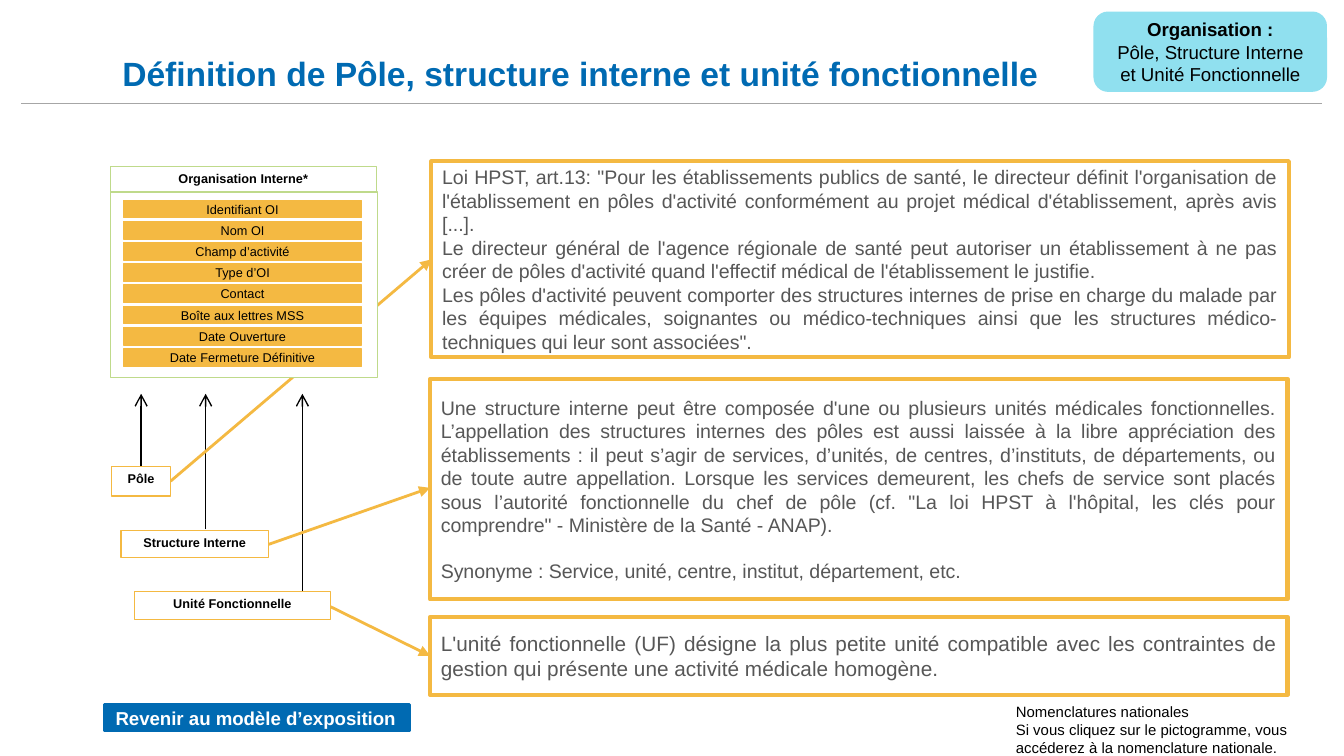
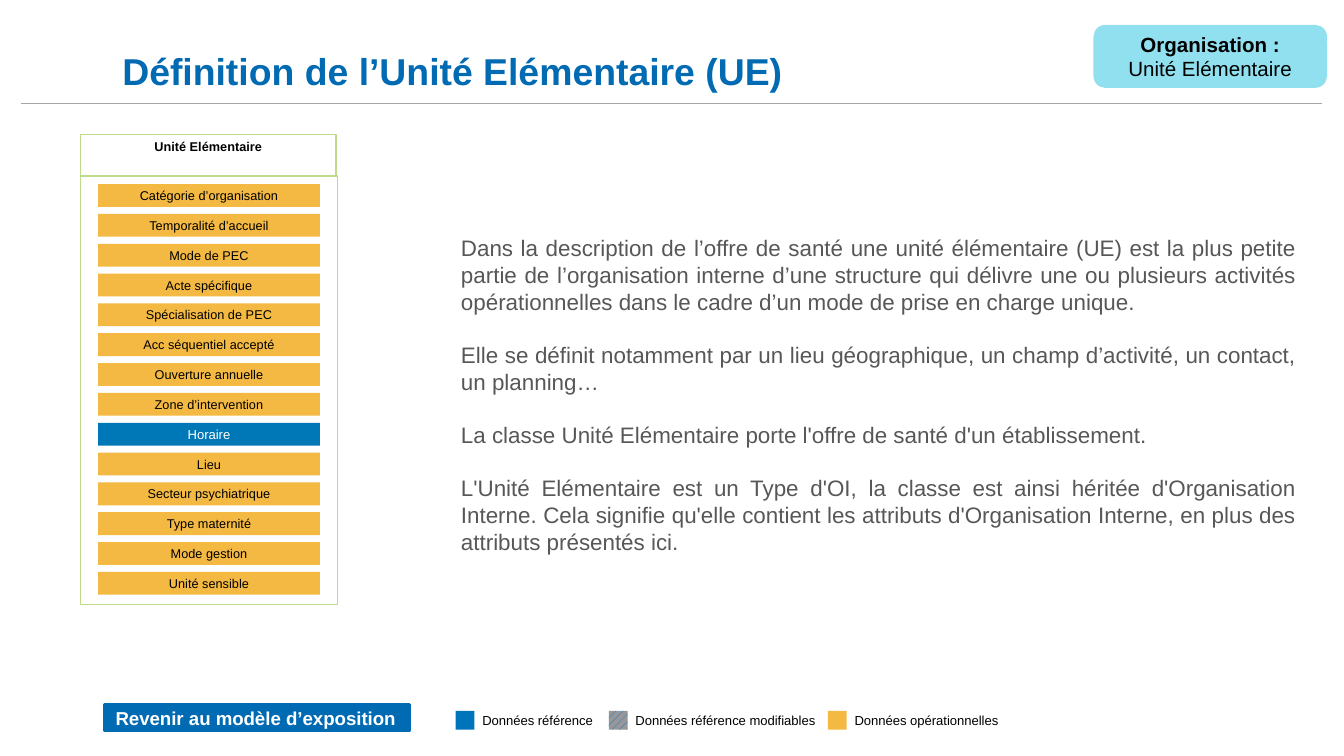
from lxml.etree import SubElement
from pptx import Presentation
from pptx.dml.color import RGBColor
from pptx.enum.dml import MSO_PATTERN as Hatch
from pptx.enum.shapes import MSO_CONNECTOR as Link, MSO_SHAPE as Form
from pptx.enum.text import MSO_ANCHOR as Anchor, PP_ALIGN as Align
from pptx.oxml.ns import qn
from pptx.util import Inches, Pt

CELL = 0.1
COLS, ROWS = 100, 56.25
FONT = "Arial"
BLUE, SEA, REF = "006AB2", "0077B6", "0074BA"
GOLD, GREEN, AQUA = "F4B942", "BFDA8B", "90E0EF"
INK, TEXT, WHITE, RULE, GREY = "000000", "575757", "FFFFFF", "A6A6A6", "97979B"

POLE_TEXT = [
    "Loi HPST, art.13: \"Pour les établissements publics de santé, le directeur définit "
    "l'organisation de l'établissement en pôles d'activité conformément au projet médical "
    "d'établissement, après avis [...].",
    "Le directeur général de l'agence régionale de santé peut autoriser un établissement à ne "
    "pas créer de pôles d'activité quand l'effectif médical de l'établissement le justifie.",
    "Les pôles d'activité peuvent comporter des structures internes de prise en charge du malade "
    "par les équipes médicales, soignantes ou médico-techniques ainsi que les structures "
    "médico-techniques qui leur sont associées\".",
]
INNER_TEXT = [
    "Une structure interne peut être composée d'une ou plusieurs unités médicales fonctionnelles. "
    "L’appellation des structures internes des pôles est aussi laissée à la libre appréciation des "
    "établissements : il peut s’agir de services, d’unités, de centres, d’instituts, de "
    "départements, ou de toute autre appellation. Lorsque les services demeurent, les chefs de "
    "service sont placés sous l’autorité fonctionnelle du chef de pôle (cf. \"La loi HPST à "
    "l'hôpital, les clés pour comprendre\" - Ministère de la Santé - ANAP).",
    "Synonyme : Service, unité, centre, institut, département, etc.",
]
UNIT_TEXT = [
    "L'unité fonctionnelle (UF) désigne la plus petite unité compatible avec les contraintes de "
    "gestion qui présente une activité médicale homogène.",
]
BASIC_TEXT = [
    "Dans la description de l’offre de santé une unité élémentaire (UE) est la plus petite partie "
    "de l’organisation interne d’une structure qui délivre une ou plusieurs activités "
    "opérationnelles dans le cadre d’un mode de prise en charge unique.",
    "Elle se définit notamment par un lieu géographique, un champ d’activité, un contact, un "
    "planning…",
    "La classe Unité Elémentaire porte l'offre de santé d'un établissement.",
    "L'Unité Elémentaire est un Type d'OI, la classe est ainsi héritée d'Organisation Interne. "
    "Cela signifie qu'elle contient les attributs d'Organisation Interne, en plus des attributs "
    "présentés ici.",
]
INNER_ROWS = ["Identifiant OI", "Nom OI", "Champ d’activité", "Type d’OI", "Contact",
              "Boîte aux lettres MSS", "Date Ouverture", "Date Fermeture Définitive"]
BASIC_ROWS = ["Catégorie d’organisation", "Temporalité d’accueil", "Mode de PEC",
              "Acte spécifique", "Spécialisation de PEC", "Acc séquentiel accepté",
              "Ouverture annuelle", "Zone d’intervention", "Horaire", "Lieu",
              "Secteur psychiatrique", "Type maternité", "Mode gestion", "Unité sensible"]


def color(code):
    """Turn a hex string into a colour."""
    return RGBColor.from_string(code)


def grid(*cells):
    """Turn grid cells into lengths."""
    return [Inches(n * CELL) for n in cells]


def write(shape, paras, size, ink=INK, bold=False, align=Align.LEFT,
          anchor=Anchor.TOP, pad=(1, 0.5), gap=0):
    """Fill a shape with evenly styled paragraphs."""
    frame = shape.text_frame
    frame.word_wrap = True
    frame.vertical_anchor = anchor
    frame.margin_left = frame.margin_right = Inches(pad[0] * CELL)
    frame.margin_top = frame.margin_bottom = Inches(pad[1] * CELL)
    for i, words in enumerate(paras):
        para = frame.add_paragraph() if i else frame.paragraphs[0]
        para.add_run().text = words
        para.alignment = align
        if i and gap:
            para.space_before = Pt(gap)
        font = para.font
        font.name, font.size, font.bold = FONT, Pt(size), bold
        font.color.rgb = color(ink)
    return frame


def label(slide, at, paras, size, **style):
    """Add a plain text box."""
    return write(slide.shapes.add_textbox(*grid(*at)), paras, size, **style)


def box(slide, at, fill=None, line=None, width=0.75, form=Form.RECTANGLE):
    """Add a flat shape."""
    shape = slide.shapes.add_shape(form, *grid(*at))
    shape.shadow.inherit = False
    if fill:
        shape.fill.solid()
        shape.fill.fore_color.rgb = color(fill)
    else:
        shape.fill.background()
    if line:
        shape.line.color.rgb = color(line)
        shape.line.width = Pt(width)
    else:
        shape.line.fill.background()
    return shape


def link(slide, start, end, ink, width, head=None):
    """Add a straight line, with an arrowhead if one is named."""
    wire = slide.shapes.add_connector(Link.STRAIGHT, *grid(*start, *end))
    wire.line.color.rgb = color(ink)
    wire.line.width = Pt(width)
    if head:
        SubElement(wire.line._get_or_add_ln(), qn("a:tailEnd"), type=head)
    SubElement(wire._element.spPr, qn("a:effectLst"))


def tag(slide, at, words, line=GOLD):
    """Add a small bold heading in a thin frame."""
    write(box(slide, at, WHITE, line), [words], 6.8, bold=True,
          align=Align.CENTER, pad=(0.3, 0.3))


def quote(slide, at, paras, size, gap=0, line=GOLD):
    """Add a justified definition."""
    write(box(slide, at, None, line, 2.25), paras, size, TEXT, align=Align.JUSTIFY,
          anchor=Anchor.MIDDLE, pad=(0.8, 0.5), gap=gap)


def card(slide, at, head, title, rows, first, step, line=None):
    """Add a class card: heading, frame and evenly stacked fields."""
    left, top, width, _ = at
    box(slide, at, WHITE, GREEN)
    tag(slide, (left, top - head, width - 0.1, head), title, GREEN)
    x, y, w, h = first
    for i, words in enumerate(rows):
        key = words == "Horaire"
        bar = box(slide, (x, y + i * step, w, h), SEA if key else GOLD, line)
        write(bar, [words], 7 if key else 6.8, WHITE if key else INK,
              align=Align.CENTER, anchor=Anchor.MIDDLE, pad=(0.3, 0))


def badge(slide, top, height, words, size):
    """Add the rounded topic mark at the top right."""
    mark = box(slide, (81.5, top, 17.1, height), AQUA, AQUA, 2, Form.ROUNDED_RECTANGLE)
    frame = write(mark, ["Organisation :", words], size, bold=True,
                  align=Align.CENTER, anchor=Anchor.MIDDLE)
    frame.paragraphs[1].font.bold = False


def start(deck, title, size, width):
    """Add a slide with its title, rule and return button."""
    slide = deck.slides.add_slide(deck.slide_layouts[6])
    link(slide, (1.6, 7.7), (98.4, 7.7), RULE, 0.25)
    frame = label(slide, (9.1, 1, width, 5.9), [title], size, ink=BLUE, bold=True,
                  anchor=Anchor.BOTTOM, pad=(0, 0))
    frame.paragraphs[0].line_spacing = Pt(22)
    write(box(slide, (7.8, 52.4, 22.7, 2), BLUE, BLUE, 1.5),
          ["Revenir au modèle d’exposition"], 10, WHITE, True,
          anchor=Anchor.MIDDLE, pad=(0.8, 0))
    return slide


def legend(slide):
    """Add the colour key at the foot."""
    keys = [(33.9, 11.8, REF, "Données référence"),
            (45.3, 16.3, GREY, "Données référence modifiables"),
            (61.6, 15.2, GOLD, "Données opérationnelles")]
    for x, width, fill, words in keys:
        mark = box(slide, (x, 52.9, 1.4, 1.4), fill)
        if fill == GREY:
            mark.fill.patterned()
            mark.fill.pattern = Hatch.WIDE_UPWARD_DIAGONAL
            mark.fill.fore_color.rgb = color(REF)
            mark.fill.back_color.rgb = color(GREY)
        label(slide, (x + 1, 52.5, width, 2.2), [words], 7)


def inner(deck):
    """Build the slide on the three internal levels."""
    slide = start(deck, "Définition de Pôle, structure interne et unité fonctionnelle", 18, 73.2)
    for x, y in [(10.5, 34.7), (15.3, 39.4), (22.5, 44)]:
        link(slide, (x, y), (x, 29.3), INK, 0.75, "arrow")
    for tip, end in [((12.7, 35.8), (32.1, 19.3)), ((20, 40.5), (32, 36.3)),
                     ((24.5, 45.1), (32, 48.8))]:
        link(slide, tip, end, GOLD, 1.5, "triangle")
    card(slide, (8.2, 14.3, 19.9, 13.8), 1.9, "Organisation Interne*", INNER_ROWS,
         (9.2, 14.9, 17.7, 1.3), 1.58, GOLD)
    tag(slide, (8.3, 34.7, 4.4, 2.2), "Pôle")
    tag(slide, (9, 39.5, 11, 2), "Structure Interne")
    tag(slide, (10, 44, 14.6, 2.1), "Unité Fonctionnelle")
    quote(slide, (32.1, 12, 63.8, 14.6), POLE_TEXT, 10.5)
    quote(slide, (32, 28.2, 63.8, 16.4), INNER_TEXT, 10.5, 12)
    quote(slide, (32, 45.9, 63.8, 5.8), UNIT_TEXT, 11.1)
    badge(slide, 1, 5.7, "Pôle, Structure Interne et Unité Fonctionnelle", 10)
    label(slide, (74.6, 51.8, 25.8, 5),
          ["Nomenclatures nationales",
           "Si vous cliquez sur le pictogramme, vous accéderez à la nomenclature nationale."], 8)


def basic(deck):
    """Build the slide on the elementary unit."""
    slide = start(deck, "Définition de l’Unité Elémentaire (UE)", 20, 88.2)
    card(slide, (6, 13.1, 19.1, 31.9), 3.1, "Unité Elémentaire", BASIC_ROWS,
         (7.3, 13.7, 16.5, 1.7), 2.22)
    quote(slide, (33.5, 16.4, 63.8, 25.9), BASIC_TEXT, 12, 14, None)
    badge(slide, 2, 4.4, "Unité Elémentaire", 11)
    legend(slide)


def main():
    """Build and save the deck."""
    deck = Presentation()
    deck.slide_width, deck.slide_height = grid(COLS, ROWS)
    inner(deck)
    basic(deck)
    deck.save("out.pptx")


if __name__ == "__main__":
    main()
